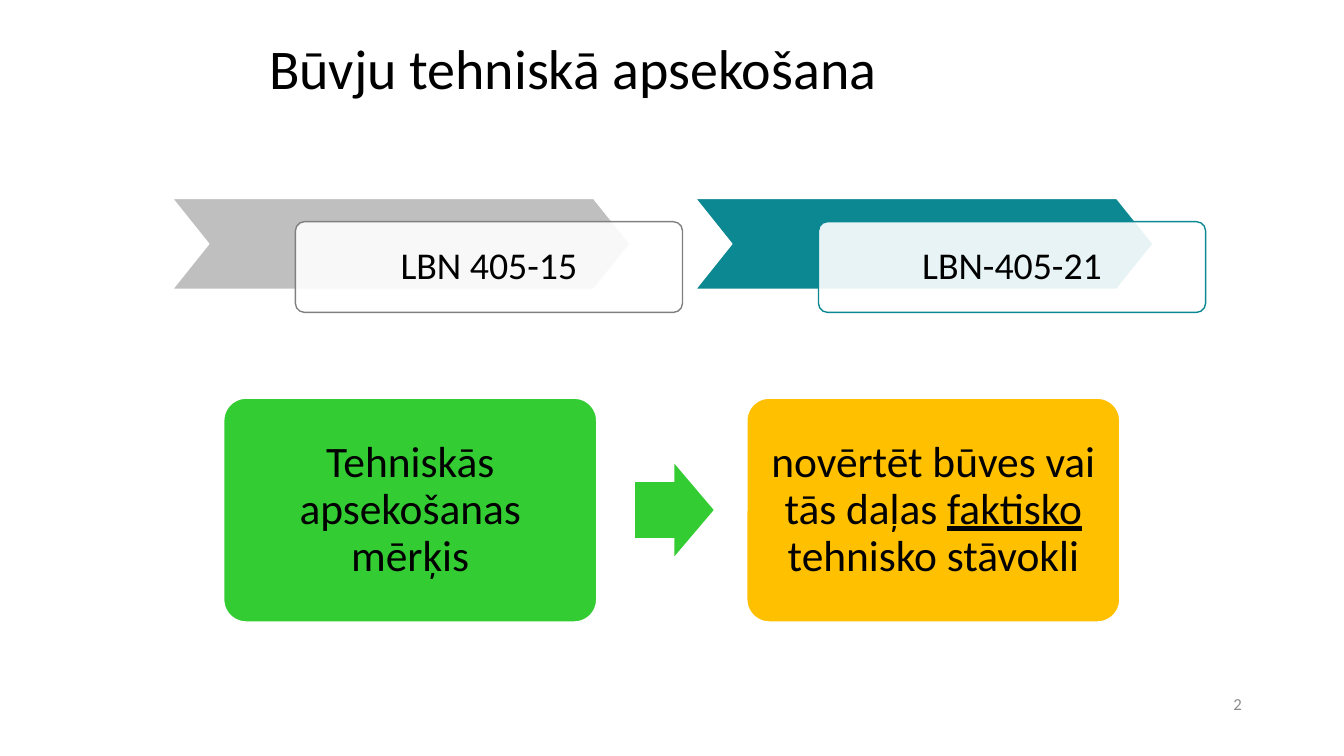
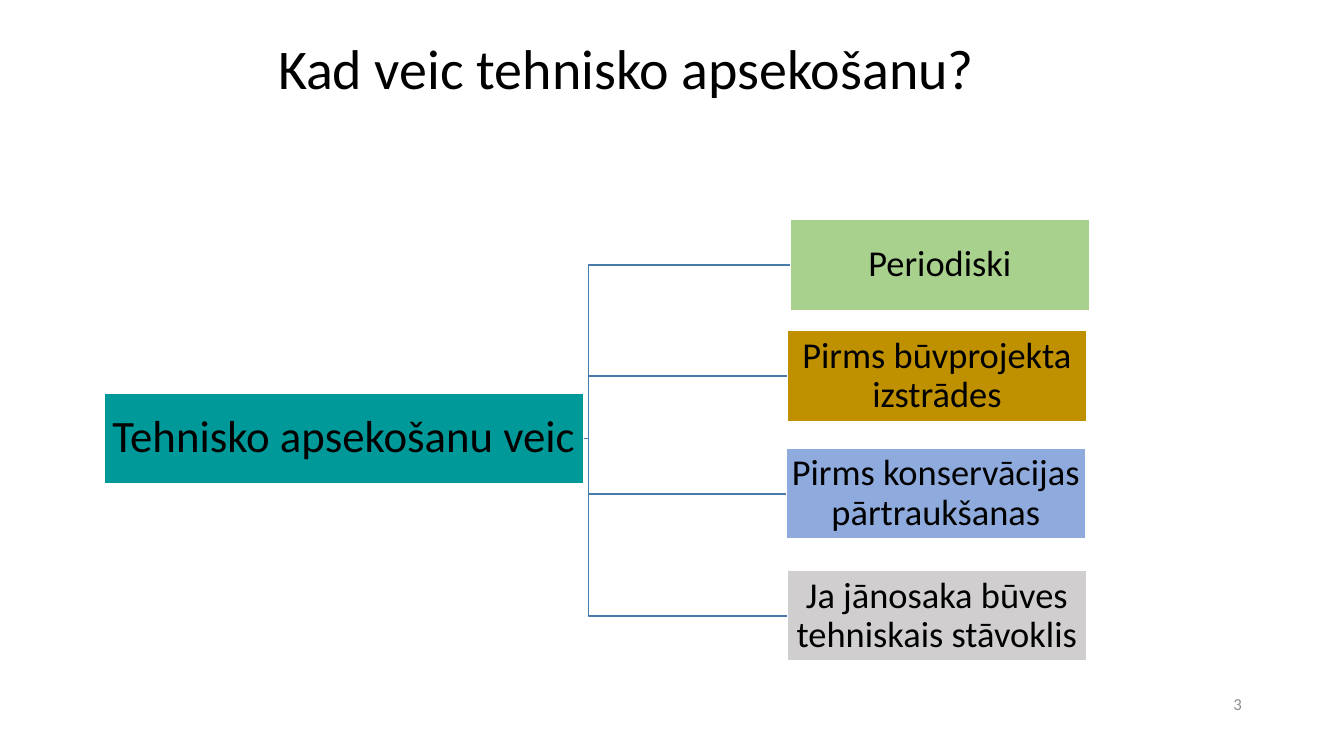
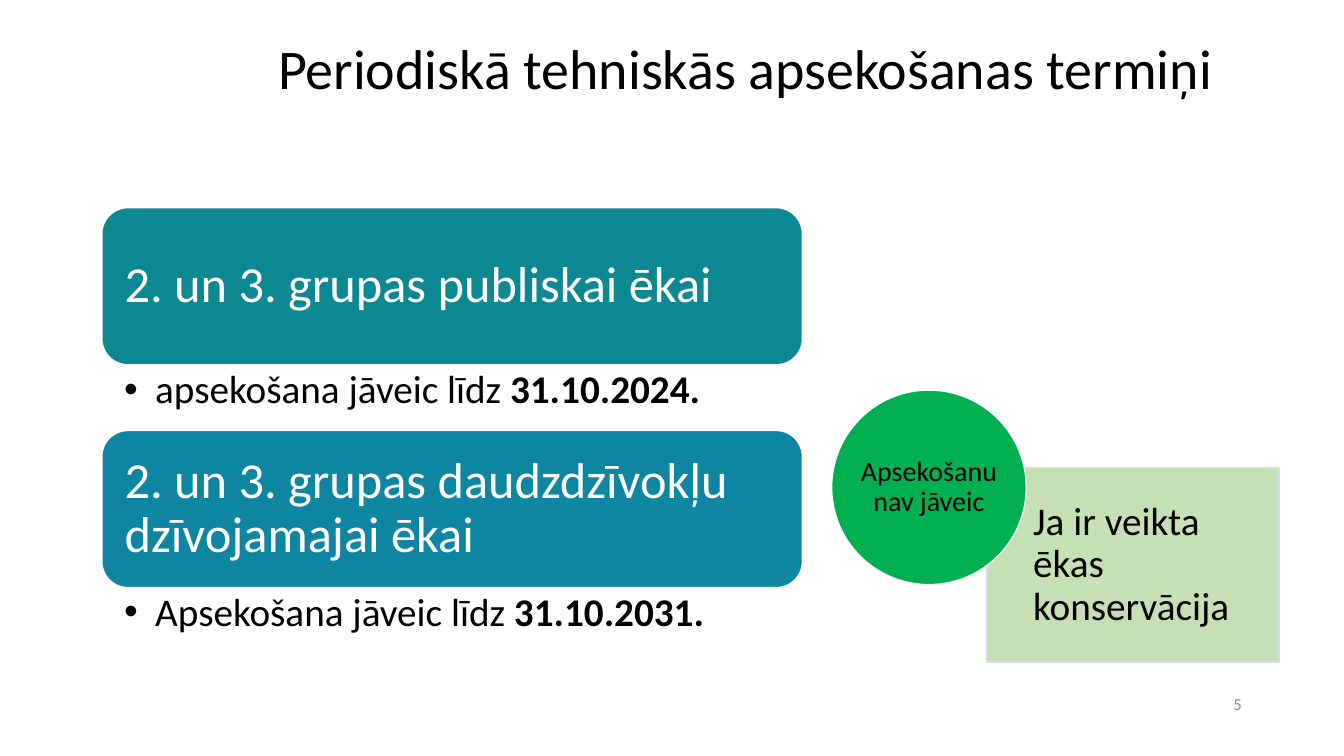
import pptx
import pptx.dml.color
import pptx.enum.dml
import pptx.enum.shapes
import pptx.enum.text
import pptx.oxml
import pptx.oxml.ns
import pptx.util

SLIDE_WIDTH = pptx.util.Inches(13.33)
SLIDE_HEIGHT = pptx.util.Inches(7.5)

FONT = "Calibri"
BLACK, WHITE, GREY = "000000", "FFFFFF", "8C8C8C"
TEAL, GREEN, AMBER = "0C8892", "33CC33", "FFC000"
CONNECTOR_BLUE = "497CAB"

TITLE_RIGHT = 95.18
PAIR_STEP = 38.92
BOX_HEIGHT = 12

SHAPES = pptx.enum.shapes.MSO_SHAPE
ALIGN = pptx.enum.text.PP_ALIGN
ANCHOR = pptx.enum.text.MSO_ANCHOR


def color(hex_value):
    return pptx.dml.color.RGBColor.from_string(hex_value)


def across(share):
    """Length from a percentage of the slide's width."""
    return round(SLIDE_WIDTH * share / 100)


def down(share):
    """Length from a percentage of the slide's height."""
    return round(SLIDE_HEIGHT * share / 100)


def place(left, top, width, height):
    return across(left), down(top), across(width), down(height)


def add_xml_child(parent, tag, **attributes):
    child = pptx.oxml.parse_xml(f"<a:{tag} {pptx.oxml.ns.nsdecls('a')}/>")
    for name, value in attributes.items():
        child.set(name, str(value))
    parent.append(child)
    return child


def add_bullet(para, indent=0.31):
    properties = para._p.get_or_add_pPr()
    hanging = pptx.util.Inches(indent)
    properties.set("marL", str(hanging))
    properties.set("indent", str(-hanging))
    add_xml_child(properties, "buFont", typeface="Arial")
    add_xml_child(properties, "buChar", char="•")


def write(box, text, size, ink=BLACK, align=ALIGN.CENTER, insets=(0.1, 0.05, 0.1, 0.05),
          anchor=ANCHOR.MIDDLE, spacing=0.9, emphasis=None, bullet=False):
    """Fill a box with one paragraph; emphasis is (words, font attribute)."""
    frame = box.text_frame
    frame.word_wrap = True
    frame.vertical_anchor = anchor
    (frame.margin_left, frame.margin_top,
     frame.margin_right, frame.margin_bottom) = map(pptx.util.Inches, insets)
    para = frame.paragraphs[0]
    para.alignment = align
    para.line_spacing = spacing
    if bullet:
        add_bullet(para)

    words, attribute = emphasis or ("", None)
    pieces = text.partition(words) if words else (text,)
    for piece in filter(None, pieces):
        span = para.add_run()
        span.text = piece
        span.font.name = FONT
        span.font.size = pptx.util.Pt(size)
        span.font.color.rgb = color(ink)
        if piece == words:
            setattr(span.font, attribute, True)


def add_text(page, area, text, size, **style):
    write(page.shapes.add_textbox(*place(*area)), text, size, **style)


def add_block(page, kind, area, fill, line=WHITE, adjustments=(), opacity=100):
    block = page.shapes.add_shape(kind, *place(*area))
    block.shadow.inherit = False
    block.fill.solid()
    block.fill.fore_color.rgb = color(fill)
    if opacity < 100:
        fill_color = next(block._element.spPr.iter(pptx.oxml.ns.qn("a:srgbClr")))
        add_xml_child(fill_color, "alpha", val=opacity * 1000)
    if line:
        block.line.color.rgb = color(line)
        block.line.width = pptx.util.Pt(1)
    else:
        block.line.fill.background()
    for index, value in enumerate(adjustments):
        block.adjustments[index] = value
    return block


def add_branch(page, root, leaf, turn=0.05):
    """Elbow from root to leaf, turning the given inches after the root."""
    start = root.left + root.width
    branch = page.shapes.add_connector(
        pptx.enum.shapes.MSO_CONNECTOR.ELBOW,
        start, root.top + root.height // 2,
        leaf.left, leaf.top + leaf.height // 2)
    branch.begin_connect(root, 3)
    branch.end_connect(leaf, 1)
    branch.line.color.rgb = color(CONNECTOR_BLUE)
    branch.line.width = pptx.util.Pt(1)
    properties = branch._element.spPr
    add_xml_child(properties, "effectLst")
    guides = next(properties.iter(pptx.oxml.ns.qn("a:avLst")))
    bend = round(100000 * pptx.util.Inches(turn) / (leaf.left - start))
    add_xml_child(guides, "gd", name="adj1", fmla=f"val {bend}")


def add_page(deck, title, title_left, number):
    page = deck.slides.add_slide(deck.slide_layouts[6])
    add_text(page, (title_left, -0.27, TITLE_RIGHT - title_left, 19.33),
             title, 40, align=ALIGN.LEFT)
    add_text(page, (70.65, 90.4, 22.5, 5.33), str(number), 12,
             ink=GREY, align=ALIGN.RIGHT, spacing=1.0)
    return page


def build_purpose(deck):
    page = add_page(deck, "Būvju tehniskā apsekošana", 19.28, 2)
    standards = [("LBN 405-15", "BFBFBF", "808080"), ("LBN-405-21", TEAL, TEAL)]
    for column, (label, fill, outline) in enumerate(standards):
        left = 12.83 + column * PAIR_STEP
        add_block(page, SHAPES.CHEVRON, (left, 26.27, 34.05, BOX_HEIGHT), fill,
                  adjustments=[0.4])
        card = add_block(page, SHAPES.ROUNDED_RECTANGLE,
                         (left + 9.15, 29.33, 28.8, BOX_HEIGHT), WHITE,
                         line=outline, adjustments=[0.1], opacity=90)
        write(card, label, 27, insets=[0.21] * 4)

    goals = [("Tehniskās apsekošanas mērķis", GREEN, None),
             ("novērtēt būves vai tās daļas faktisko tehnisko stāvokli", AMBER,
              ("faktisko", "underline"))]
    for column, (label, fill, emphasis) in enumerate(goals):
        goal = add_block(page, SHAPES.ROUNDED_RECTANGLE,
                         (16.65 + column * PAIR_STEP, 52.67, 27.75, 29.6), fill,
                         adjustments=[0.1])
        write(goal, label, 31, insets=[0.13] * 4, emphasis=emphasis)
    add_block(page, SHAPES.RIGHT_ARROW, (47.25, 61.33, 5.85, 12.27), GREEN,
              line=None, adjustments=[0.6, 0.5])


def build_occasions(deck):
    page = add_page(deck, "Kad veic tehnisko apsekošanu?", 19.95, 3)
    tight = [0.02] * 4
    root = add_block(page, SHAPES.RECTANGLE, (7.73, 52, 35.7, BOX_HEIGHT), "009999")
    write(root, "Tehnisko apsekošanu veic", 32, insets=tight)
    occasions = [
        ("Periodiski", "A9D18E", 58.8, 29.07),
        ("Pirms būvprojekta izstrādes", "BF9000", 58.58, 43.73),
        ("Pirms konservācijas pārtraukšanas", "8FAADC", 58.5, 59.33),
        ("Ja jānosaka būves tehniskais stāvoklis", "D0CECE", 58.58, 75.47),
    ]
    for label, fill, left, top in occasions:
        leaf = add_block(page, SHAPES.RECTANGLE, (left, top, 22.28, BOX_HEIGHT), fill)
        write(leaf, label, 26, insets=tight)
        add_branch(page, root, leaf)


def build_deadlines(deck):
    page = add_page(deck, "Periodiskā tehniskās apsekošanas termiņi", 19.95, 5)
    left, width, head_height, note_height = 7.58, 52.13, 20.8, 8.67
    deadlines = [
        ("2. un 3. grupas publiskai ēkai", TEAL,
         "apsekošana jāveic līdz ", "31.10.2024."),
        ("2. un 3. grupas daudzdzīvokļu dzīvojamajai ēkai", "0E86A2",
         "Apsekošana jāveic līdz ", "31.10.2031."),
    ]
    for row, (group, fill, note, date) in enumerate(deadlines):
        top = 27.47 + row * (head_height + note_height)
        head = add_block(page, SHAPES.ROUNDED_RECTANGLE,
                         (left, top, width, head_height), fill)
        write(head, group, 36, ink=WHITE, align=ALIGN.LEFT, insets=[0.15] * 4)
        add_text(page, (left, top + head_height, width, note_height), note + date, 28,
                 align=ALIGN.LEFT, insets=(0.22, 0.05, 0.28, 0.05),
                 anchor=ANCHOR.TOP, emphasis=(date, "bold"), bullet=True)

    reason = add_block(page, SHAPES.RECTANGLE, (73.43, 61.87, 21.75, 25.73), "C5E0B4",
                       line="D2DEEF")
    write(reason, "Ja ir veikta ēkas konservācija", 28, align=ALIGN.LEFT,
          insets=(0.46, 0.22, 0.22, 0.22))
    exemption = add_block(page, SHAPES.OVAL, (61.88, 51.6, 14.48, 25.73), "00B050")
    write(exemption, "Apsekošanu nav jāveic", 20, insets=[0] * 4)


def main():
    deck = pptx.Presentation()
    deck.slide_width = SLIDE_WIDTH
    deck.slide_height = SLIDE_HEIGHT
    build_purpose(deck)
    build_occasions(deck)
    build_deadlines(deck)
    deck.save("out.pptx")


if __name__ == "__main__":
    main()
